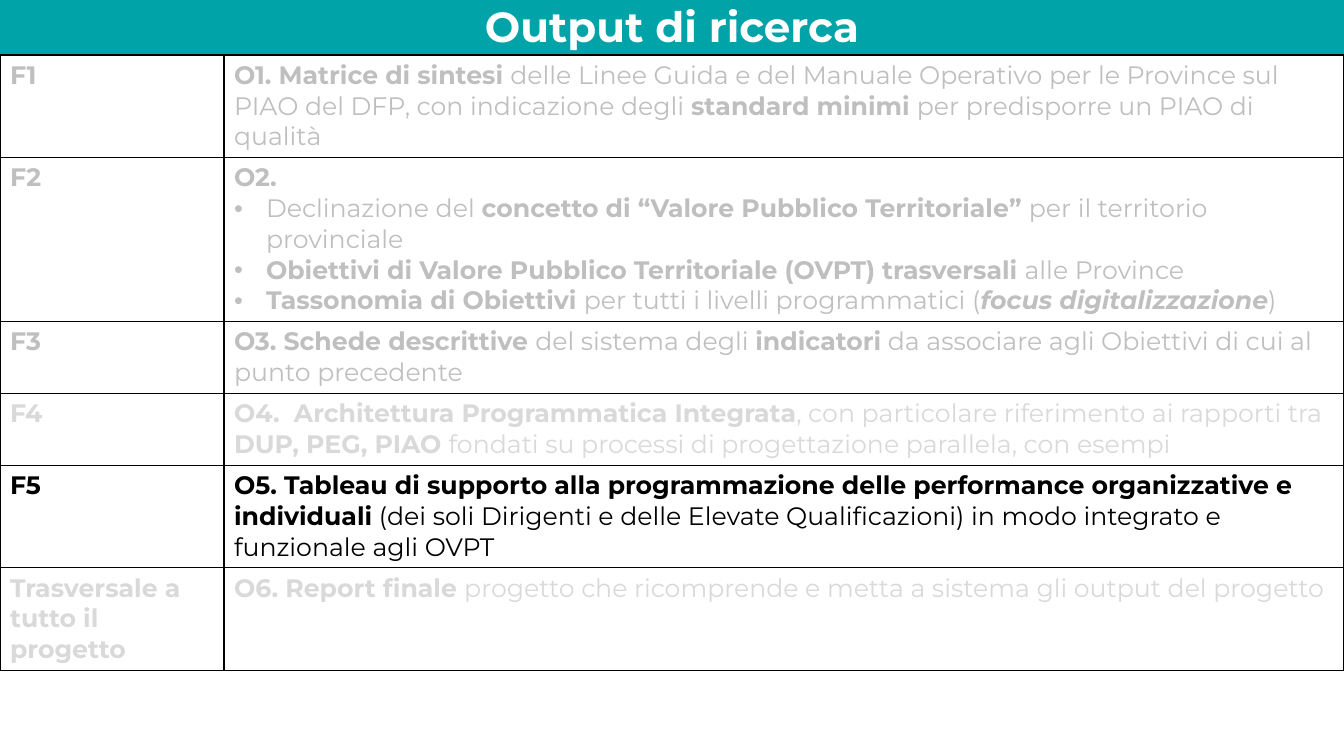
from lxml import etree
from pptx import Presentation
from pptx import util as u
from pptx.dml.color import RGBColor
from pptx.enum import shapes, text
from pptx.oxml import ns

EMU_PER_PX = 914400 / 100.8
WIDTH, HEIGHT = 1344, 756

TEAL = RGBColor(0x00, 0xA3, 0xA8)
WHITE = RGBColor(0xFF, 0xFF, 0xFF)
BLACK = RGBColor(0x00, 0x00, 0x00)
GREY = RGBColor(0xBF, 0xBF, 0xBF)
PALE = RGBColor(0xD9, 0xD9, 0xD9)

# Each output: phase, colour, row height in px, paragraphs.
# *bold* and *_bold italic* mark the emphasis; a leading • makes a bullet.
OUTPUTS = [
    ("F1", GREY, 102, [
        "*O1. Matrice di sintesi *delle Linee Guida e del Manuale Operativo per le Province "
        "sul PIAO del DFP, con indicazione degli *standard minimi *per predisporre un PIAO "
        "di qualità"]),
    ("F2", GREY, 164, [
        "*O2.*",
        "•Declinazione del *concetto di “Valore Pubblico Territoriale” *per il territorio "
        "provinciale",
        "•*Obiettivi di Valore Pubblico Territoriale (OVPT) trasversali *alle Province",
        "•*Tassonomia di Obiettivi *per tutti i livelli programmatici "
        "(*_focus digitalizzazione*)"]),
    ("F3", GREY, 72, [
        "*O3. Schede descrittive *del sistema degli *indicatori* da associare agli Obiettivi "
        "di cui al punto precedente"]),
    ("F4", PALE, 72, [
        "*O4.  Architettura Programmatica Integrata*, con particolare riferimento ai rapporti "
        "tra *DUP, PEG, PIAO *fondati su processi di progettazione parallela, con esempi"]),
    ("F5", BLACK, 102, [
        "*O5. Tableau di supporto alla programmazione delle performance organizzative e "
        "individuali* (dei soli Dirigenti e delle Elevate Qualificazioni) in modo integrato "
        "e funzionale agli OVPT"]),
    ("Trasversale a tutto il progetto", PALE, 102, [
        "*O6. Report finale *progetto che ricomprende e metta a sistema gli output del "
        "progetto"]),
]


def px(length):
    return u.Emu(round(length * EMU_PER_PX))


class SlideBuilder:
    font_name = "Montserrat"
    body_size = 18
    bullet_indent = 32

    def __init__(self, slide):
        self.slide = slide

    def style(self, run, size, color, bold=False, italic=False):
        font = run.font
        font.name, font.size = self.font_name, u.Pt(size)
        font.bold, font.italic = bold, italic
        font.color.rgb = color

    def banner(self, title, left, top, width, height):
        band = self.slide.shapes.add_shape(
            shapes.MSO_SHAPE.RECTANGLE, px(left), px(top), px(width), px(height))
        band.shadow.inherit = False
        band.fill.solid()
        band.fill.fore_color.rgb = TEAL
        band.line.fill.background()
        frame = band.text_frame
        frame.text = title
        frame.vertical_anchor = text.MSO_ANCHOR.MIDDLE
        heading = frame.paragraphs[0]
        heading.alignment = text.PP_ALIGN.CENTER
        self.style(heading.runs[0], 30, WHITE, bold=True)

    def bullet(self, paragraph):
        props = paragraph._p.get_or_add_pPr()
        indent = px(self.bullet_indent)
        props.set("marL", str(indent))
        props.set("indent", str(-indent))
        etree.SubElement(props, ns.qn("a:buFont"), typeface="Arial")
        etree.SubElement(props, ns.qn("a:buChar"), char="•")

    def rich_text(self, paragraph, marked, color):
        """Write text in which asterisks switch bold on and off."""
        if marked.startswith("•"):
            self.bullet(paragraph)
            marked = marked[1:]
        for i, piece in enumerate(marked.split("*")):
            if piece:
                run = paragraph.add_run()
                run.text = piece.lstrip("_")
                self.style(run, self.body_size, color, i % 2 == 1, piece.startswith("_"))

    def border(self, cell):
        props = cell._tc.get_or_add_tcPr()
        for position, side in enumerate(("lnL", "lnR", "lnT", "lnB")):
            line = etree.Element(ns.qn(f"a:{side}"), w=str(u.Pt(1)))
            fill = etree.SubElement(line, ns.qn("a:solidFill"))
            etree.SubElement(fill, ns.qn("a:srgbClr"), val=str(BLACK))
            props.insert(position, line)

    def cell(self, cell, paragraphs, color):
        cell.fill.background()
        self.border(cell)
        frame = cell.text_frame
        for i, marked in enumerate(paragraphs):
            paragraph = frame.add_paragraph() if i else frame.paragraphs[0]
            self.rich_text(paragraph, marked, color)

    def output_table(self, outputs, left, top, column_widths):
        total_height = sum(height for _, _, height, _ in outputs)
        table = self.slide.shapes.add_table(
            len(outputs), len(column_widths), px(left), px(top),
            px(sum(column_widths)), px(total_height)).table
        table.first_row = table.horz_banding = False
        for column, width in zip(table.columns, column_widths):
            column.width = px(width)
        for row, (phase, color, height, description) in zip(table.rows, outputs):
            row.height = px(height)
            self.cell(row.cells[0], [f"*{phase}*"], color)
            self.cell(row.cells[1], description, color)


def main():
    deck = Presentation()
    deck.slide_width, deck.slide_height = px(WIDTH), px(HEIGHT)
    builder = SlideBuilder(deck.slides.add_slide(deck.slide_layouts[6]))
    builder.banner("Output di ricerca", 0, -3, WIDTH, 58)
    builder.output_table(OUTPUTS, 0, 55, (224, WIDTH - 224))
    deck.save("out.pptx")


if __name__ == "__main__":
    main()
